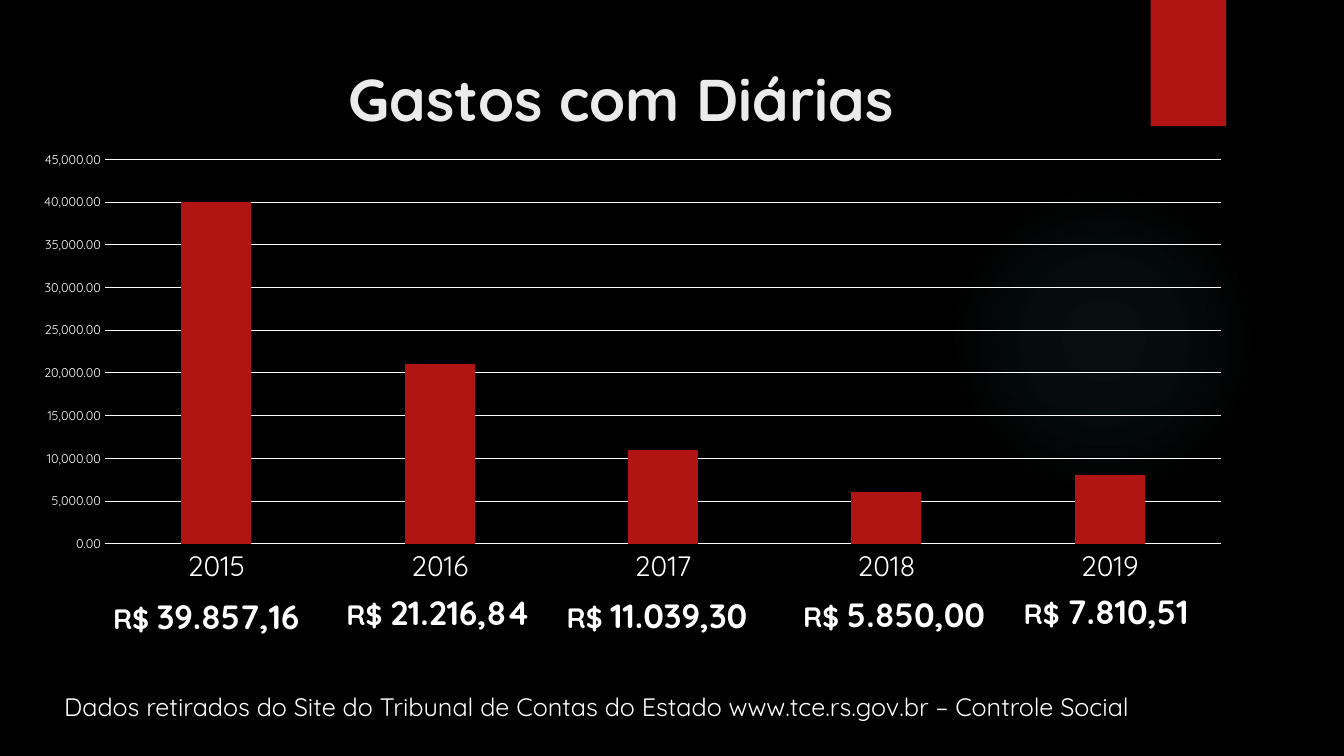
from lxml import etree
from pptx import Presentation
from pptx.chart.data import CategoryChartData
from pptx.dml.color import RGBColor
from pptx.enum.chart import XL_CHART_TYPE as ChartType, XL_TICK_MARK as Tick
from pptx.enum.shapes import MSO_SHAPE as Shape
from pptx.enum.text import MSO_AUTO_SIZE as AutoSize, MSO_ANCHOR as Anchor, PP_ALIGN as Align
from pptx.oxml import parse_xml
from pptx.oxml.ns import qn
from pptx.util import Cm, Pt

# Content
TITLE = "Gastos com Diárias"
SOURCE = ("Dados retirados do Site do Tribunal de Contas do Estado "
          "www.tce.rs.gov.br – Controle Social")
EXPENSES = [  # year, column value, label text, label left, top, width in cm
    ("2015", 40000, "39.857,16", 2.6, 14.88, 5.54),
    ("2016", 21000, "21.216,84", 8.48, 14.8, 6.86),
    ("2017", 11000, "11.039,30", 14.03, 14.86, 6.86),
    ("2018", 6000, "5.850,00", 19.99, 14.85, 6.02),
    ("2019", 8000, "7.810,51", 25.55, 14.76, 6.02),
]
PLOT_AREA = {"x": 0.07, "y": 0.036, "w": 0.911, "h": 0.855}
GLOW_STOPS = [(0, 7), (36, 6), (69, 0)]  # position %, opacity %

FONT = "Quicksand"
BLACK = RGBColor(0x00, 0x00, 0x00)
WHITE = RGBColor(0xFF, 0xFF, 0xFF)
PALE = RGBColor(0xEB, 0xEB, 0xEB)
RED = RGBColor(0xB0, 0x15, 0x13)
TEAL = RGBColor(0x50, 0xB9, 0xC1)


def set_font(font, size, color=WHITE, bold=False):
    font.color.rgb = color
    for name, value in {"name": FONT, "size": Pt(size), "bold": bold}.items():
        setattr(font, name, value)


def add_shape(s, kind, box):
    sp = s.shapes.add_shape(kind, *map(Cm, box))
    sp.shadow.inherit = False
    sp.line.fill.background()
    return sp


def add_text(s, box, runs, align=Align.LEFT, auto_size=AutoSize.SHAPE_TO_FIT_TEXT):
    tf = s.shapes.add_textbox(*map(Cm, box)).text_frame
    options = {"word_wrap": True, "auto_size": auto_size, "vertical_anchor": Anchor.TOP}
    for name, value in options.items():
        setattr(tf, name, value)
    p = tf.paragraphs[0]
    p.alignment = align
    for text, *style in runs:
        r = p.add_run()
        r.text = text
        set_font(r.font, *style)


def add_glow(s, box):
    sp = add_shape(s, Shape.OVAL, box)
    stops = "".join(
        f'<a:gs pos="{pos * 1000}"><a:srgbClr val="{TEAL}">'
        f'<a:alpha val="{alpha * 1000}"/></a:srgbClr></a:gs>'
        for pos, alpha in GLOW_STOPS)
    grad = parse_xml(
        '<a:gradFill xmlns:a="http://schemas.openxmlformats.org/drawingml/2006/main">'
        f'<a:gsLst>{stops}</a:gsLst><a:path path="circle">'
        '<a:fillToRect l="50000" t="50000" r="50000" b="50000"/></a:path></a:gradFill>')
    sp._element.spPr.find(qn("a:prstGeom")).addnext(grad)


def fix_plot_area(chart):
    plot_area = chart._chartSpace.chart.plotArea
    for old in plot_area.findall(qn("c:layout")):
        plot_area.remove(old)
    layout = etree.Element(qn("c:layout"))
    manual = etree.SubElement(layout, qn("c:manualLayout"))
    settings = {"layoutTarget": "inner", "xMode": "edge", "yMode": "edge", **PLOT_AREA}
    for tag, value in settings.items():
        etree.SubElement(manual, qn(f"c:{tag}")).set("val", str(value))
    plot_area.insert(0, layout)


def add_expense_chart(s, box):
    data = CategoryChartData(number_format="#,##0.00")
    data.categories = [row[0] for row in EXPENSES]
    data.add_series("Series 1", [row[1] for row in EXPENSES])
    chart = s.shapes.add_chart(ChartType.COLUMN_CLUSTERED, *map(Cm, box), data).chart
    chart.has_legend = chart.has_title = False
    set_font(chart.font, 10)
    fix_plot_area(chart)

    # Columns
    plot = chart.plots[0]
    for name, value in {"gap_width": 219, "overlap": -27, "vary_by_categories": False}.items():
        setattr(plot, name, value)
    fill = plot.series[0].format.fill
    fill.solid()
    fill.fore_color.rgb = RED

    # Axes
    cat_axis, val_axis = chart.category_axis, chart.value_axis
    for axis, size in ((cat_axis, 20), (val_axis, 9)):
        axis.major_tick_mark = axis.minor_tick_mark = Tick.NONE
        set_font(axis.tick_labels.font, size)
    scale = {"minimum_scale": 0, "maximum_scale": 45000, "major_unit": 5000}
    for name, value in scale.items():
        setattr(val_axis, name, value)
    val_axis.tick_labels.number_format = "#,##0.00"
    val_axis.tick_labels.number_format_is_linked = False
    val_axis.format.line.fill.background()
    for line in (cat_axis.format.line, val_axis.major_gridlines.format.line):
        line.color.rgb = WHITE
        line.width = Pt(0.75)


def main():
    prs = Presentation()
    prs.slide_width, prs.slide_height = Cm(33.87), Cm(19.05)
    s = prs.slides.add_slide(prs.slide_layouts[6])
    s.background.fill.solid()
    s.background.fill.fore_color.rgb = BLACK

    # Backdrop
    add_glow(s, (23.9, 4.65, 7.82, 7.82))
    tab = add_shape(s, Shape.RECTANGLE, (29, 0, 1.9, 3.18))
    tab.fill.solid()
    tab.fill.fore_color.rgb = RED

    # Title, chart and source
    add_text(s, (1.37, 1.45, 28.55, 2.41), [(TITLE, 42, PALE, True)],
             Align.CENTER, AutoSize.NONE)
    add_expense_chart(s, (0.48, 3.61, 30.89, 11.33))
    add_text(s, (1.37, 17.3, 30.71, 1.02), [(SOURCE, 18)])

    # Amount below each column
    for _, _, amount, left, top, width in EXPENSES:
        add_text(s, (left, top, width, 1.27),
                 [("R$ ", 20, WHITE, True), (amount, 24, WHITE, True)])

    prs.save("out.pptx")


if __name__ == "__main__":
    main()
